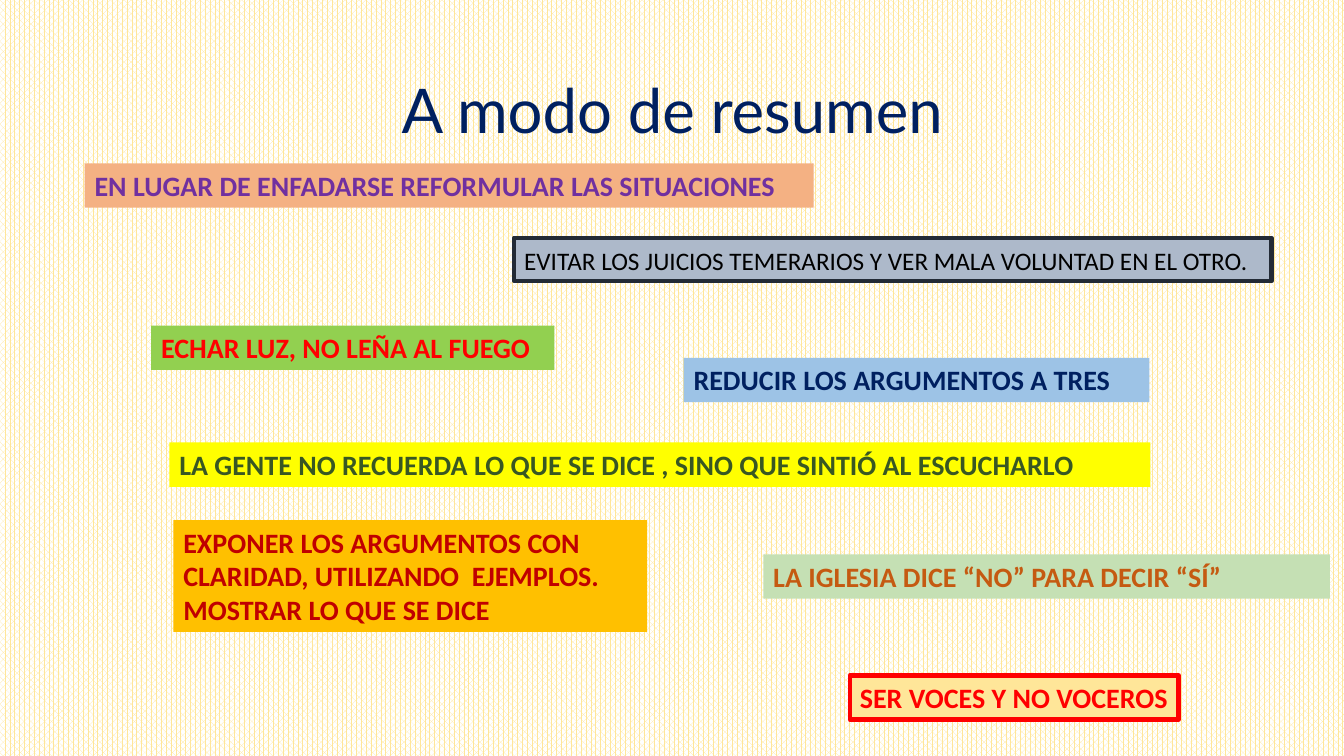
from pptx import Presentation
from pptx.dml.color import RGBColor
from pptx.enum.dml import MSO_PATTERN
from pptx.enum.text import MSO_ANCHOR, MSO_AUTO_SIZE, PP_ALIGN
from pptx.util import Inches, Pt

STRIPES = MSO_PATTERN.PERCENT_70
MIDDLE = MSO_ANCHOR.MIDDLE
CENTER, JUSTIFY = PP_ALIGN.CENTER, PP_ALIGN.JUSTIFY
NO_AUTOFIT, GROW = MSO_AUTO_SIZE.NONE, MSO_AUTO_SIZE.SHAPE_TO_FIT_TEXT
TITLE_ONLY = 5


def color(hex_text):
    return RGBColor.from_string(hex_text)


def add_run(paragraph, text, font_name, size, text_color, bold=False):
    run = paragraph.add_run()
    run.text = text
    run.font.name = font_name
    run.font.size = Pt(size)
    run.font.bold = bold
    run.font.color.rgb = color(text_color)


presentation = Presentation()
presentation.slide_width = Inches(13.33)
presentation.slide_height = Inches(7.5)
slide = presentation.slides.add_slide(presentation.slide_layouts[TITLE_ONLY])

background = slide.background.fill
background.patterned()
background.pattern = STRIPES
background.fore_color.rgb = color("FFE699")
background.back_color.rgb = color("FFFFFF")

title = slide.shapes.title
title.left, title.top = Inches(0.92), Inches(0.4)
title.width, title.height = Inches(11.5), Inches(1.45)
title.text_frame.auto_size = NO_AUTOFIT
title.text_frame.vertical_anchor = MIDDLE
heading = title.text_frame.paragraphs[0]
heading.alignment = CENTER
heading.line_spacing = 0.9
add_run(heading, "A modo de resumen", "Lato", 44, "002060")

# text, left, top, width, height, fill, text color, border color
bold_messages = [
    ("SER VOCES Y NO VOCEROS", 8.43, 6.7, 3.26, 0.44, "FFE699", "FF0000", "FF0000"),
    ("EN LUGAR DE ENFADARSE REFORMULAR LAS SITUACIONES",
     0.84, 1.62, 7.23, 0.44, "F4B183", "7030A0", None),
    ("ECHAR LUZ, NO LEÑA AL FUEGO", 1.5, 3.23, 4, 0.44, "92D050", "FF0000", None),
    ("REDUCIR LOS ARGUMENTOS A TRES", 6.78, 3.55, 4.62, 0.44, "9DC3E6", "002060", None),
    ("LA GENTE NO RECUERDA LO QUE SE DICE , SINO QUE SINTIÓ AL ESCUCHARLO",
     1.68, 4.39, 9.73, 0.44, "FFFF00", "385723", None),
    ("EXPONER LOS ARGUMENTOS CON CLARIDAD, UTILIZANDO  EJEMPLOS. MOSTRAR LO QUE SE DICE",
     1.72, 5.16, 4.7, 1.11, "FFC000", "C00000", None),
    ("LA IGLESIA DICE “NO” PARA DECIR “SÍ”",
     7.57, 5.5, 5.62, 0.44, "C5E0B4", "C55A11", None),
]
plain_message = ("EVITAR LOS JUICIOS TEMERARIOS Y VER MALA VOLUNTAD EN EL OTRO.",
                 5.1, 2.36, 7.51, 0.43, "ADB9CA", "000000", "222A35")

for message in bold_messages + [plain_message]:
    text, left, top, width, height, fill_color, text_color, border_color = message
    box = slide.shapes.add_textbox(Inches(left), Inches(top), Inches(width), Inches(height))
    box.fill.solid()
    box.fill.fore_color.rgb = color(fill_color)
    if border_color:
        box.line.color.rgb = color(border_color)
        box.line.width = Pt(3.25)
    box.text_frame.word_wrap = True
    box.text_frame.auto_size = GROW
    paragraph = box.text_frame.paragraphs[0]
    if message is plain_message:
        paragraph.alignment = JUSTIFY
        paragraph.line_spacing = 1.07
        paragraph.space_after = Pt(8)
        add_run(paragraph, text, "Calibri", 18, text_color)
    else:
        add_run(paragraph, text, "Calibri", 20, text_color, bold=True)

presentation.save("out.pptx")
